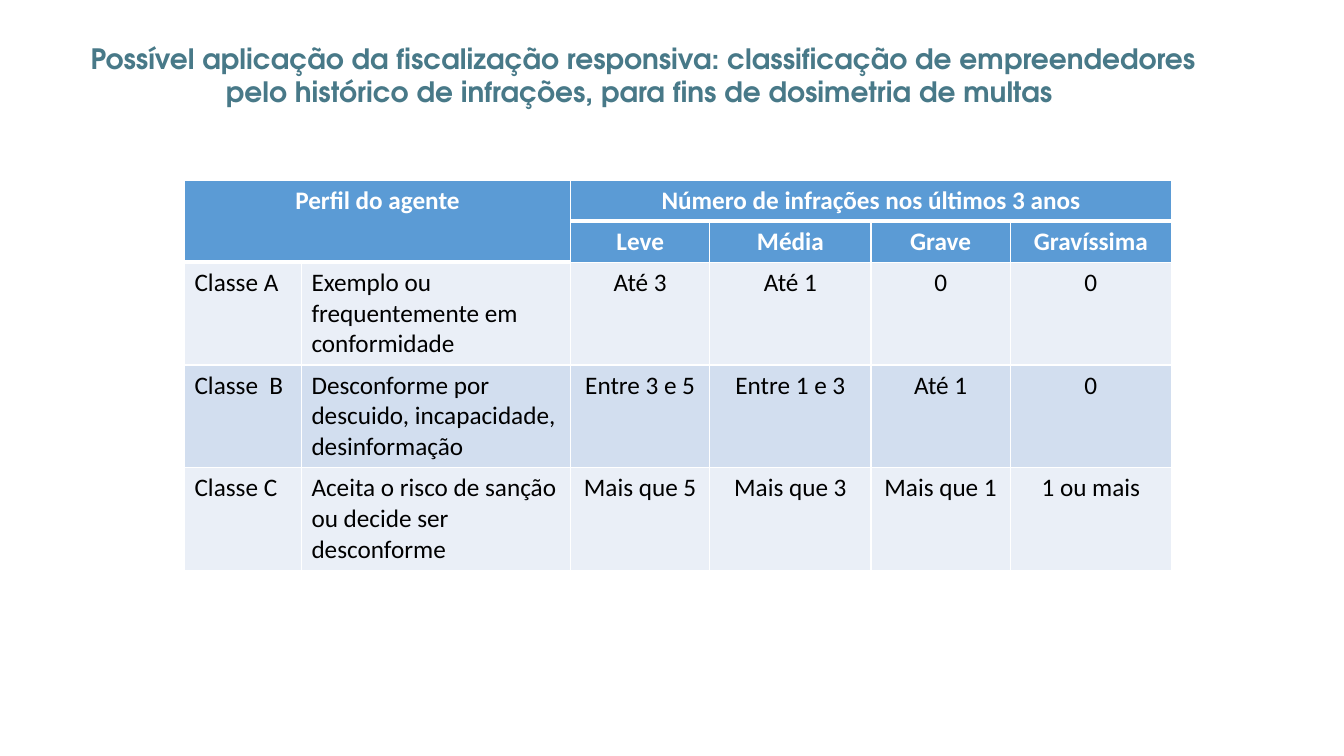
"""Build a slide with a table of agent classes by number of infractions."""
from lxml.etree import fromstring
from pptx import Presentation
from pptx.dml.color import RGBColor
from pptx.enum.text import MSO_ANCHOR, PP_ALIGN
from pptx.oxml.ns import nsdecls
from pptx.util import Inches, Pt

TITLE = ("Possível aplicação da fiscalização responsiva: classificação de empreendedores "
         "pelo histórico de infrações, para fins de dosimetria de multas ")
ROWS = [
    ("Perfil do agente", "", "Número de infrações nos últimos 3 anos", "", "", ""),
    ("", "", "Leve", "Média", "Grave", "Gravíssima"),
    ("Classe A", "Exemplo ou frequentemente em  conformidade", "Até 3", "Até 1", "0", "0"),
    ("Classe  B", "Desconforme por descuido, incapacidade, desinformação",
     "Entre 3 e 5", "Entre 1 e 3", "Até 1", "0"),
    ("Classe C", "Aceita o risco de sanção ou decide ser desconforme",
     "Mais que 5", "Mais que 3", "Mais que 1", "1 ou mais"),
]
WIDTHS = [1.16, 2.67, 1.38, 1.6, 1.38, 1.6]
HEIGHTS = [0.4, 0.4, 1.02, 1.02, 1.02]
HEADS = 2
HEAD, BANDS = "5B9BD5", ("EAEFF7", "D2DEEF")


def color(code):
    return RGBColor.from_string(code)


def style(frame, font, size, code, bold, align):
    for para in frame.paragraphs:
        para.alignment = align
        for run in para.runs:
            run.font.name = font
            run.font.size = Pt(size)
            run.font.bold = bold
            run.font.color.rgb = color(code)


def underline(cell):
    line = fromstring(f'<a:lnB {nsdecls("a")} w="{Pt(3)}"><a:solidFill>'
                      '<a:srgbClr val="FFFFFF"/></a:solidFill></a:lnB>')
    cell._tc.get_or_add_tcPr().insert(0, line)


def add_title(slide):
    title = slide.shapes.title
    title.left, title.top = Inches(0.78), Inches(0.36)
    title.width, title.height = Inches(11.2), Inches(0.77)
    frame = title.text_frame
    frame.text = TITLE
    frame.word_wrap = True
    frame.vertical_anchor = MSO_ANCHOR.TOP
    style(frame, "TeX Gyre Adventor", 20, "487988", True, PP_ALIGN.CENTER)


def add_grid(slide):
    grid = slide.shapes.add_table(
        len(ROWS), len(WIDTHS), Inches(1.83), Inches(1.79),
        Inches(sum(WIDTHS)), Inches(sum(HEIGHTS))).table
    for col, width in zip(grid.columns, WIDTHS):
        col.width = Inches(width)
    for row, height in zip(grid.rows, HEIGHTS):
        row.height = Inches(height)
    grid.cell(0, 0).merge(grid.cell(1, 1))
    grid.cell(0, 2).merge(grid.cell(0, 5))
    for r, texts in enumerate(ROWS):
        head = r < HEADS
        for c, text in enumerate(texts):
            cell = grid.cell(r, c)
            cell.text_frame.text = text
            cell.fill.solid()
            cell.fill.fore_color.rgb = color(HEAD if head else BANDS[(r - HEADS) % 2])
            align = PP_ALIGN.CENTER if head or c > 1 else PP_ALIGN.LEFT
            style(cell.text_frame, "Calibri", 18, "FFFFFF" if head else "000000", head, align)
            if r == 0 or (head and c < 2):
                underline(cell)


def main():
    deck = Presentation()
    deck.slide_width, deck.slide_height = Inches(13.33), Inches(7.5)
    slide = deck.slides.add_slide(deck.slide_layouts[5])
    add_title(slide)
    add_grid(slide)
    deck.save("out.pptx")


if __name__ == "__main__":
    main()
